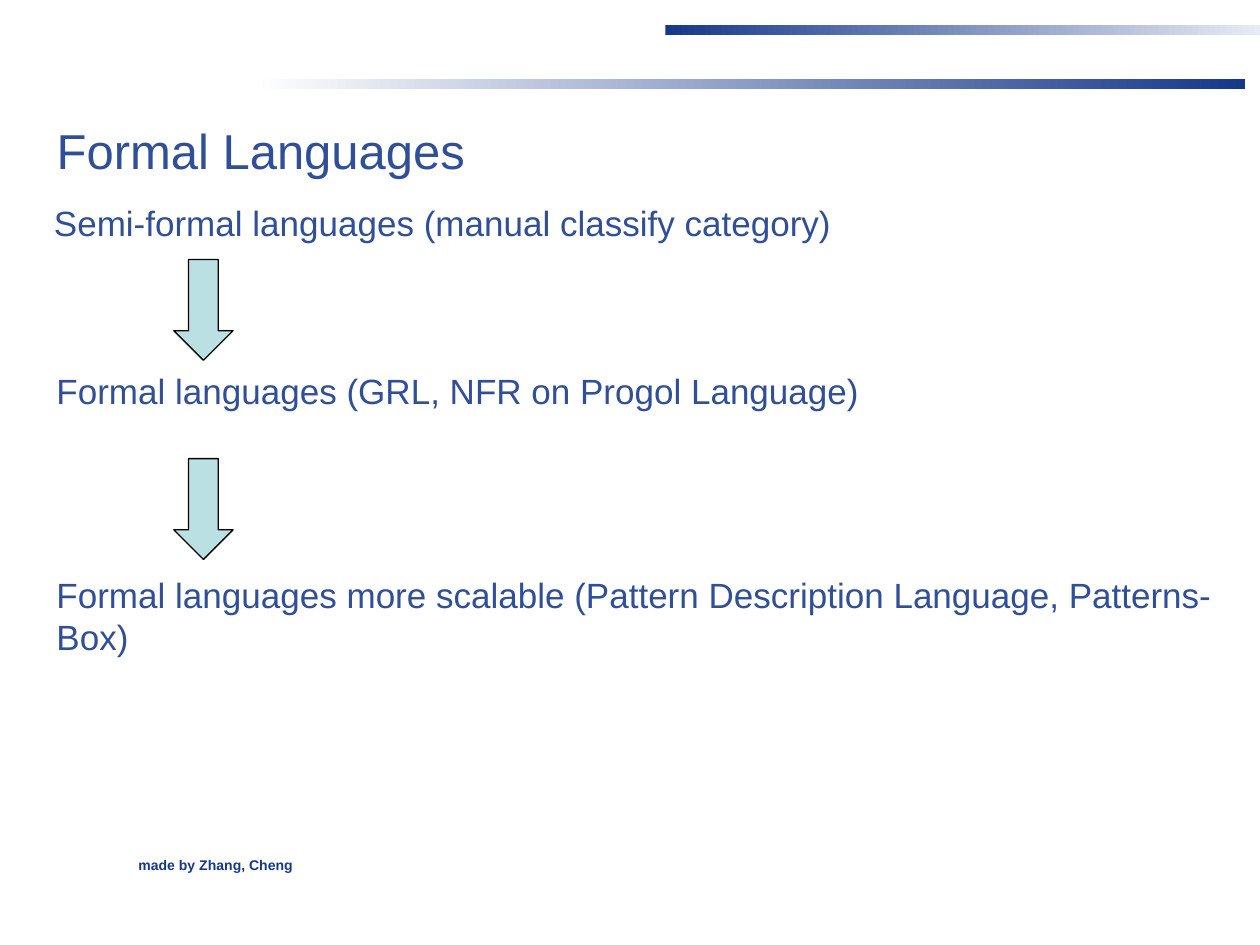
from pptx import Presentation
from pptx.dml.color import RGBColor
from pptx.enum import shapes, text
from pptx.util import Inches, Pt

COLORS = {"navy": "16388A", "text": "304F97", "white": "FFFFFF",
          "pale": "E7EBF3", "arrow": "BBE0E3", "outline": "000000"}
FONT = "Arial"

# Content: boxes are (left, top, width, height) in inches
TITLE = ("Formal Languages", (0.35, 0.91, 9.65, 0.57))
STAGES = [
    ("Semi-formal languages (manual classify category)", (0.33, 1.55, 9.67, 0.44)),
    ("Formal languages (GRL, NFR on Progol Language)", (0.35, 2.88, 9.67, 0.44)),
    ("Formal languages more scalable (Pattern Description Language, Patterns-Box)",
     (0.35, 4.5, 9.67, 0.77)),
]
CREDIT = ("made by Zhang, Cheng", (1, 6.75, 4.33, 0.5))
BARS = [
    ((2.01, 0.63, 7.87, 0.08), ("white", "navy")),
    ((5.28, 0.2, 4.72, 0.08), ("navy", "pale")),
]
ARROW_TOPS = [2.06, 3.64]


def rgb(name):
    return RGBColor.from_string(COLORS[name])


def inches(box):
    return [Inches(length) for length in box]


def add_shape(kind, box):
    shape = slide.shapes.add_shape(kind, *inches(box))
    shape.shadow.inherit = False
    return shape


def write(holder, words, size, color="text", bold=False):
    frame = holder.text_frame
    frame.word_wrap = True
    frame.auto_size = text.MSO_AUTO_SIZE.NONE
    frame.vertical_anchor = text.MSO_ANCHOR.TOP
    paragraph = frame.paragraphs[0]
    paragraph.alignment = text.PP_ALIGN.LEFT
    run = paragraph.add_run()
    run.text = words
    run.font.name, run.font.size, run.font.bold = FONT, Pt(size), bold
    run.font.color.rgb = rgb(color)


prs = Presentation()
prs.slide_width, prs.slide_height = Inches(10), Inches(7.5)
slide = prs.slides.add_slide(prs.slide_layouts[5])

# Gradient bars
for box, ends in BARS:
    bar = add_shape(shapes.MSO_SHAPE.RECTANGLE, box)
    bar.fill.gradient()
    bar.fill.gradient_angle = 0
    for stop, color in zip(bar.fill.gradient_stops, ends):
        stop.color.rgb = rgb(color)
    bar.line.fill.background()

# Title
title = slide.shapes.title
title.left, title.top, title.width, title.height = inches(TITLE[1])
write(title, TITLE[0], 28)

# Stages and credit
for words, box in STAGES:
    write(slide.shapes.add_textbox(*inches(box)), words, 20)
write(slide.shapes.add_textbox(*inches(CREDIT[1])), CREDIT[0], 8, "navy", True)

# Arrows between stages
for top in ARROW_TOPS:
    arrow = add_shape(shapes.MSO_SHAPE.DOWN_ARROW, (1.38, top, 0.47, 0.8))
    arrow.fill.solid()
    arrow.fill.fore_color.rgb = rgb("arrow")
    arrow.line.color.rgb = rgb("outline")
    arrow.line.width = Pt(0.75)

prs.save("out.pptx")
